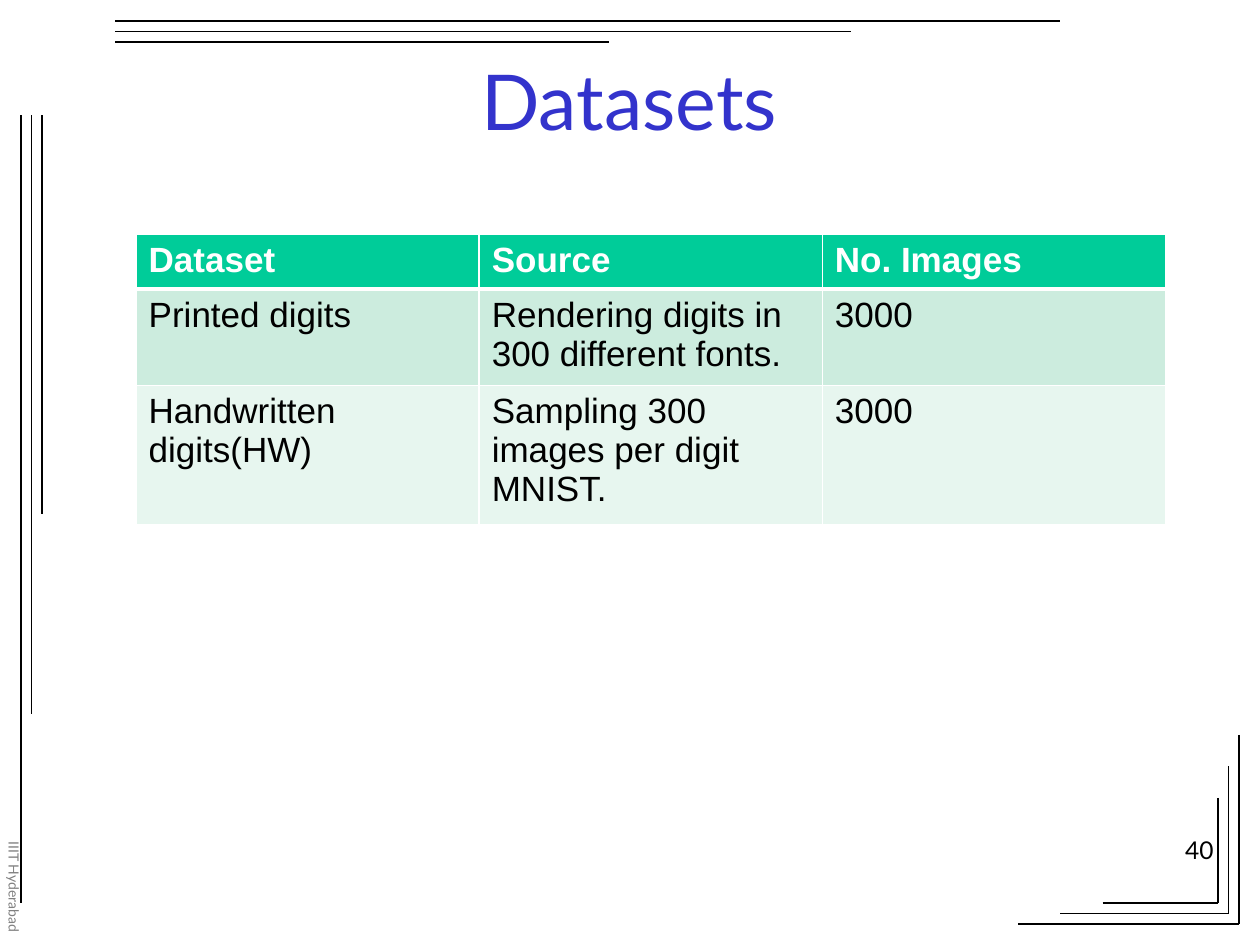
from dataclasses import dataclass

from lxml.etree import SubElement
from pptx import Presentation
from pptx.dml.color import RGBColor
from pptx.enum.shapes import MSO_CONNECTOR as Connector
from pptx.enum.text import MSO_ANCHOR as Anchor, PP_ALIGN as Align
from pptx.oxml.ns import qn
from pptx.util import Emu, Inches, Pt

UNITS_PER_INCH = 12  # the frame lines sit on a grid of twelfths of an inch


@dataclass(frozen=True)
class Theme:
    ink: str = "000000"
    paper: str = "FFFFFF"
    title: str = "3333CC"
    muted: str = "808080"
    header: str = "00CC99"
    bands: tuple[str, str] = ("CCECDE", "E7F6EF")
    heading_font: str = "Lato"
    table_font: str = "Arial"
    title_size: int = 44
    table_size: int = 20
    number_size: int = 14
    credit_size: int = 8
    frame_line: float = 0.75
    cell_line: int = 1
    header_line: int = 3


@dataclass(frozen=True)
class Dataset:
    name: str
    source: str
    images: str


@dataclass(frozen=True)
class Corner:
    """A horizontal and a vertical line that meet at (right, bottom), in grid units."""
    left: int
    top: int
    right: int
    bottom: int


THEME = Theme()
HEADINGS = Dataset("Dataset", "Source", "No. Images")
DATASETS = [
    Dataset("Printed digits", "Rendering digits in 300 different fonts.", "3000"),
    Dataset("Handwritten digits(HW)", "Sampling 300 images per digit MNIST.", "3000"),
]
TOP_ENDS = (101, 81, 58)
LEFT_ENDS = (86, 68, 49)
CORNERS = [Corner(97, 70, 118, 88), Corner(101, 73, 117, 87), Corner(105, 76, 116, 86)]


def place(shape, left: float, top: float, width: float, height: float) -> None:
    shape.left, shape.top = Inches(left), Inches(top)
    shape.width, shape.height = Inches(width), Inches(height)


def write(frame, text: str, *, size: float, color: str, font: str = THEME.heading_font,
          bold: bool = False, align: Align = Align.LEFT) -> None:
    frame.word_wrap = True
    paragraph = frame.paragraphs[0]
    paragraph.alignment = align
    run = paragraph.add_run()
    run.text = text
    run.font.name, run.font.size, run.font.bold = font, Pt(size), bold
    run.font.color.rgb = RGBColor.from_string(color)


def draw_line(slide, x1: int, y1: int, x2: int, y2: int) -> None:
    ends = (Emu(Inches(unit) // UNITS_PER_INCH) for unit in (x1, y1, x2, y2))
    line = slide.shapes.add_connector(Connector.STRAIGHT, *ends)
    line.line.color.rgb = RGBColor.from_string(THEME.ink)
    line.line.width = Pt(THEME.frame_line)
    SubElement(line._element.spPr, qn("a:effectLst"))


def draw_frame(slide) -> None:
    start = 11
    for offset, end in enumerate(TOP_ENDS, start=2):
        draw_line(slide, start, offset, end, offset)
    for offset, end in enumerate(LEFT_ENDS, start=2):
        draw_line(slide, offset, start, offset, end)
    for corner in CORNERS:
        draw_line(slide, corner.left, corner.bottom, corner.right, corner.bottom)
        draw_line(slide, corner.right, corner.top, corner.right, corner.bottom)


def add_border(cell, side: str, width: float) -> None:
    border = SubElement(cell._tc.get_or_add_tcPr(), qn(f"a:ln{side}"), w=str(Pt(width)))
    fill = SubElement(border, qn("a:solidFill"))
    SubElement(fill, qn("a:srgbClr"), val=THEME.paper)


def fill_cell(cell, text: str, row: int) -> None:
    is_header = row == 0
    thick_sides = {0: "B", 1: "T"}
    for side in "LRTB":
        thick = thick_sides.get(row) == side
        add_border(cell, side, THEME.header_line if thick else THEME.cell_line)
    cell.fill.solid()
    band = THEME.header if is_header else THEME.bands[(row - 1) % 2]
    cell.fill.fore_color.rgb = RGBColor.from_string(band)
    write(cell.text_frame, text, size=THEME.table_size, font=THEME.table_font,
          color=THEME.paper if is_header else THEME.ink, bold=is_header)


def add_dataset_table(slide) -> None:
    records = [HEADINGS, *DATASETS]
    row_height = 0.41
    table = slide.shapes.add_table(
        len(records), 3, Inches(1.08), Inches(1.86),
        Inches(8.17), Inches(row_height * len(records))).table
    table.horz_banding = False
    for row, record in enumerate(records):
        for column, text in enumerate((record.name, record.source, record.images)):
            fill_cell(table.cell(row, column), text, row)


def add_credit(slide) -> None:
    credit = slide.shapes.add_textbox(Inches(-0.1), Inches(6.58), Inches(0.33), Inches(0.92))
    credit.text_frame._txBody.bodyPr.set("vert", "eaVert")
    write(credit.text_frame, "IIIT Hyderabad", size=THEME.credit_size, color=THEME.muted)


def add_page_number(slide) -> None:
    number = slide.shapes.add_textbox(Inches(9.24), Inches(6.58), Inches(0.49), Inches(0.41))
    write(number.text_frame, "40", size=THEME.number_size, color=THEME.ink, align=Align.RIGHT)


def main() -> None:
    deck = Presentation()
    deck.slide_width, deck.slide_height = Inches(10), Inches(7.5)
    slide = deck.slides.add_slide(deck.slide_layouts[5])
    draw_frame(slide)
    add_credit(slide)
    title = slide.shapes.title
    place(title, 0.75, 0.17, 8.49, 1.24)
    title.text_frame.vertical_anchor = Anchor.MIDDLE
    write(title.text_frame, "Datasets", size=THEME.title_size, color=THEME.title,
          align=Align.CENTER)
    add_page_number(slide)
    add_dataset_table(slide)
    deck.save("out.pptx")


if __name__ == "__main__":
    main()
